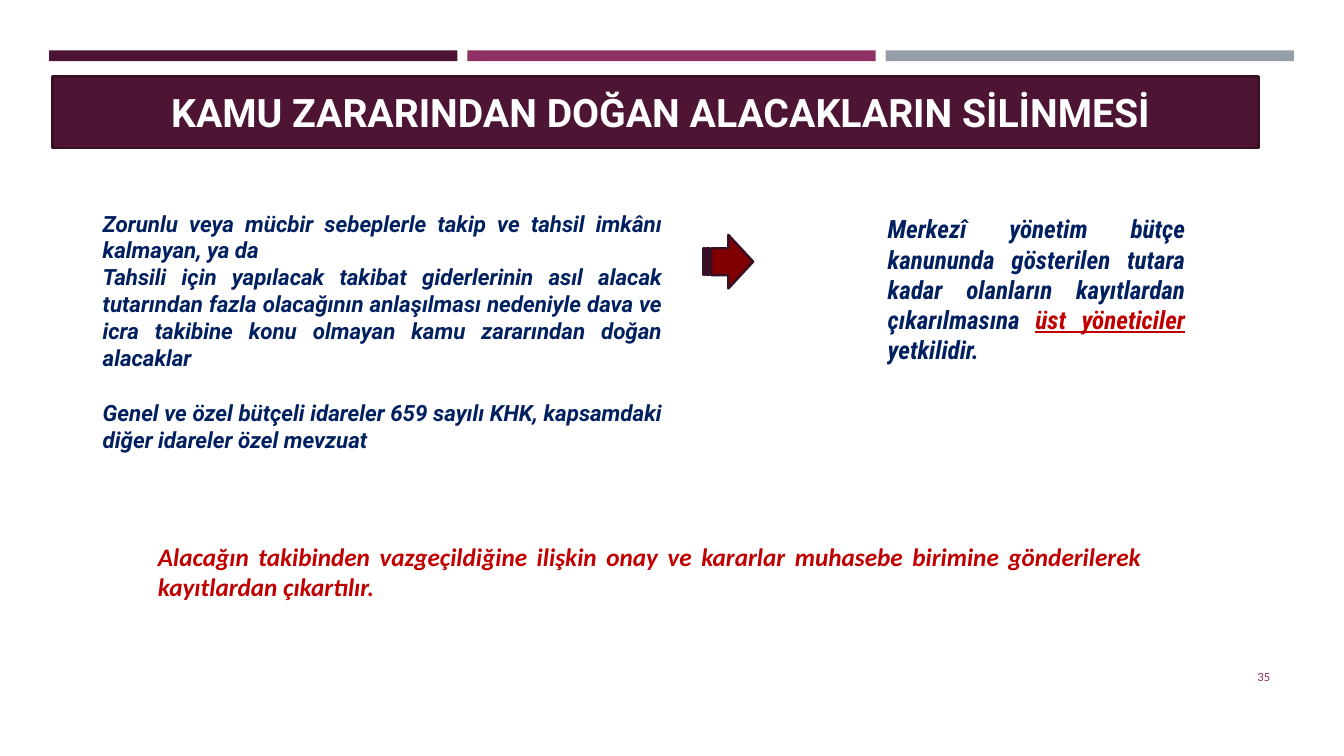
"""Build the slide on writing off receivables that arise from public loss."""
from pptx import Presentation
from pptx.dml.color import RGBColor
from pptx.enum.shapes import MSO_SHAPE
from pptx.enum.text import MSO_ANCHOR, MSO_AUTO_SIZE, PP_ALIGN
from pptx.util import Cm, Pt

PLUM = "4D1434"
MAGENTA = "903163"
GRAY = "969FA7"
OUTLINE = "390F26"
NAVY = "002060"
RED = "C00000"
MAROON = "800000"
WHITE = "FFFFFF"


def color(hex_string):
    """Turn a hex string into a colour."""
    return RGBColor.from_string(hex_string)


def paint(shape, fill, line=None):
    """Give a shape a solid fill and an optional outline."""
    shape.fill.solid()
    shape.fill.fore_color.rgb = color(fill)
    if line:
        shape.line.color.rgb = color(line)
        shape.line.width = Pt(1.75)
    else:
        shape.line.fill.background()


def add_run(paragraph, text, *, font, size, ink, bold=False, italic=False, underline=False):
    """Append a formatted run to a paragraph."""
    run = paragraph.add_run()
    run.text = text
    run.font.name = font
    run.font.size = Pt(size)
    run.font.color.rgb = color(ink)
    run.font.bold = bold
    run.font.italic = italic
    run.font.underline = underline


def add_shape(slide, kind, left, top, width, height, fill, line=None):
    """Draw a preset shape without a shadow."""
    shape = slide.shapes.add_shape(kind, Cm(left), Cm(top), Cm(width), Cm(height))
    shape.shadow.inherit = False
    paint(shape, fill, line)


def add_text(slide, left, top, width, height, paragraphs, *,
             align=PP_ALIGN.JUSTIFY, anchor=MSO_ANCHOR.TOP, **style):
    """Add a text box; each paragraph is a list of (text, overrides) runs."""
    box = slide.shapes.add_textbox(Cm(left), Cm(top), Cm(width), Cm(height))
    frame = box.text_frame
    frame.word_wrap = True
    frame.vertical_anchor = anchor
    for index, runs in enumerate(paragraphs):
        paragraph = frame.add_paragraph() if index else frame.paragraphs[0]
        paragraph.alignment = align
        for text, overrides in runs:
            add_run(paragraph, text, **{**style, **overrides})


def set_title(slide, text):
    """Place the title as a filled banner."""
    title = slide.shapes.title
    title.left, title.top, title.width, title.height = Cm(1.32), Cm(1.93), Cm(30.4), Cm(1.8)
    paint(title, PLUM, OUTLINE)
    frame = title.text_frame
    frame.auto_size = MSO_AUTO_SIZE.NONE
    frame.word_wrap = True
    frame.vertical_anchor = MSO_ANCHOR.MIDDLE
    frame.margin_left = Cm(0.5)
    paragraph = frame.paragraphs[0]
    paragraph.alignment = PP_ALIGN.CENTER
    add_run(paragraph, text, font="Roboto", size=28, ink=WHITE, bold=True)


def main():
    """Build and save the slide."""
    presentation = Presentation()
    presentation.slide_width, presentation.slide_height = Cm(33.87), Cm(19.05)
    slide = presentation.slides.add_slide(presentation.slide_layouts[5])

    for index, fill in enumerate((PLUM, MAGENTA, GRAY)):
        add_shape(slide, MSO_SHAPE.RECTANGLE, 1.24 + index * 10.54, 1.27, 10.29, 0.27, fill)
    set_title(slide, "KAMU ZARARINDAN DOĞAN ALACAKLARIN SİLİNMESİ")

    emphasis = {"bold": True, "italic": True}
    conditions = {"font": "Roboto", "size": 16, "ink": NAVY, **emphasis}
    add_text(slide, 2.34, 5.16, 14.6, 4.37, [
        [("Zorunlu veya mücbir sebeplerle takip ve tahsil imkânı kalmayan, ya da", {})],
        [("Tahsili için yapılacak takibat giderlerinin asıl alacak tutarından fazla "
          "olacağının anlaşılması nedeniyle dava ve icra takibine konu olmayan kamu "
          "zararından doğan alacaklar", {})],
    ], **conditions)
    add_text(slide, 2.34, 9.93, 14.6, 1.63, [
        [("Genel ve özel bütçeli idareler 659 sayılı KHK, kapsamdaki diğer idareler "
          "özel mevzuat", {})],
    ], **conditions)

    add_shape(slide, MSO_SHAPE.STRIPED_RIGHT_ARROW, 17.73, 5.92, 1.25, 1.35, MAROON, OUTLINE)
    add_text(slide, 22.12, 5.26, 8, 4.11, [
        [("Merkezî yönetim bütçe kanununda gösterilen tutara kadar olanların "
          "kayıtlardan çıkarılmasına ", {}),
         ("üst yöneticiler ", {"ink": RED, "underline": True}),
         ("yetkilidir.", {})],
    ], font="Roboto Condensed", size=18, ink=NAVY, **emphasis)

    add_text(slide, 3.73, 13.51, 25.3, 1.8, [
        [("Alacağın takibinden vazgeçildiğine ilişkin onay ve kararlar muhasebe "
          "birimine gönderilerek kayıtlardan çıkartılır.", {})],
    ], font="Calibri", size=18, ink=RED, **emphasis)
    add_text(slide, 29.34, 16.54, 2.92, 1.02, [[("35", {})]], align=PP_ALIGN.RIGHT,
             anchor=MSO_ANCHOR.MIDDLE, font="Calibri", size=9, ink=MAGENTA)

    presentation.save("out.pptx")


if __name__ == "__main__":
    main()
